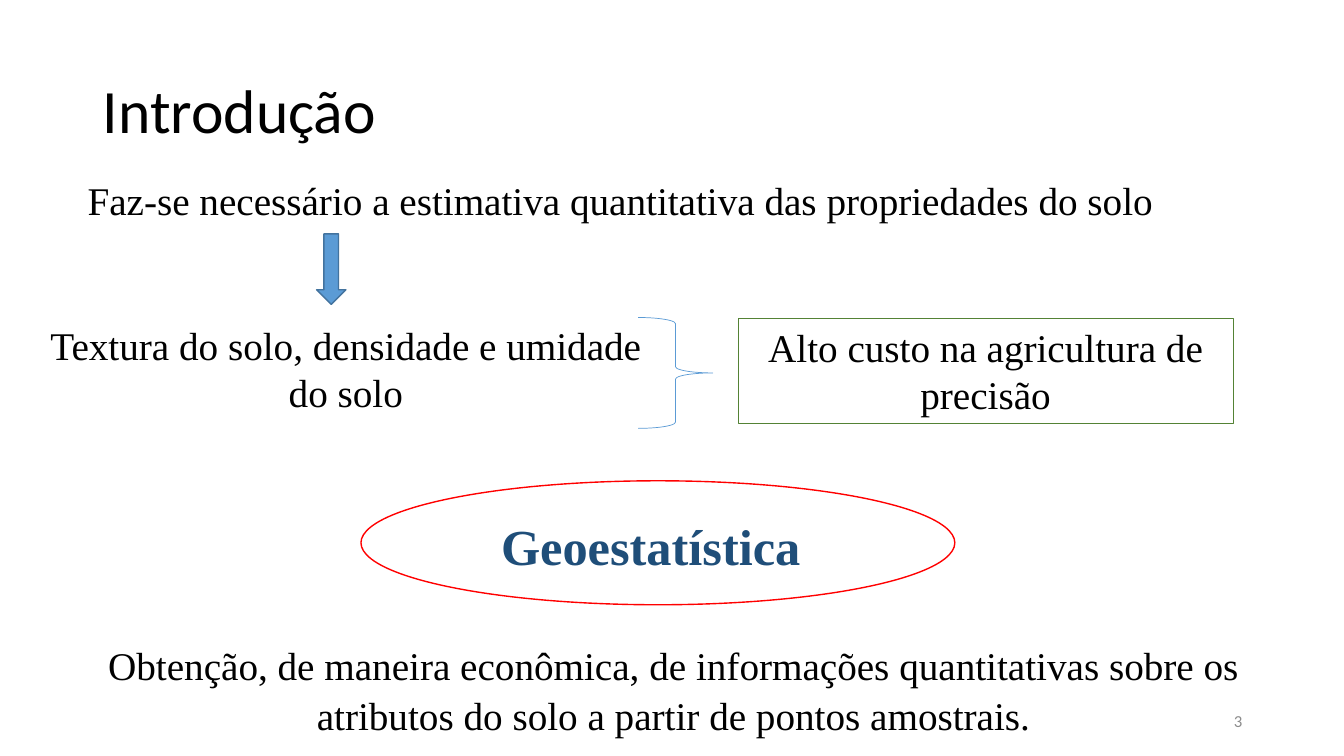
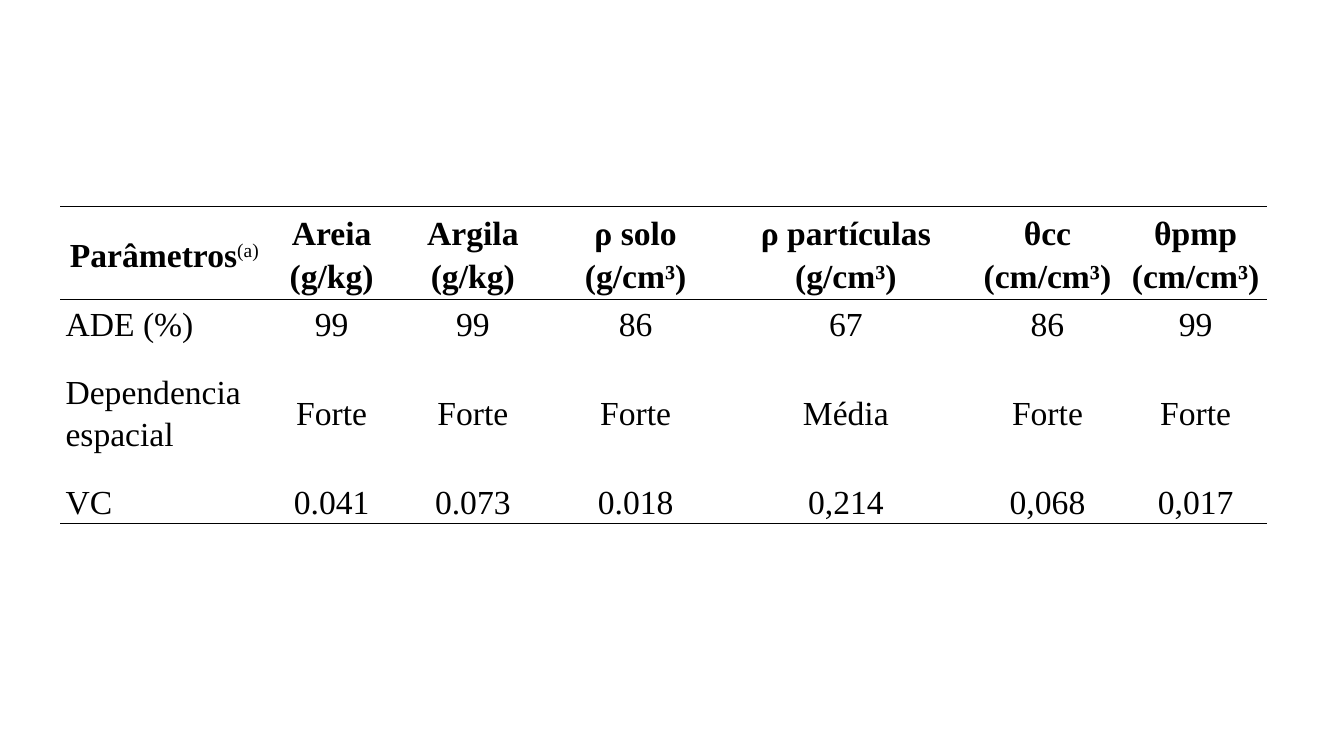
import lxml.etree
import pptx
import pptx.dml.color
import pptx.enum.shapes
import pptx.enum.text
import pptx.oxml.ns
import pptx.util

Inches = pptx.util.Inches
Pt = pptx.util.Pt
Align = pptx.enum.text.PP_ALIGN
Anchor = pptx.enum.text.MSO_ANCHOR
Shape = pptx.enum.shapes.MSO_SHAPE
qn = pptx.oxml.ns.qn

TITLE_ONLY, BLANK = 5, 6


def color(hex_string):
    return pptx.dml.color.RGBColor.from_string(hex_string)


class Deck:
    """Holds the shared style and the slide being filled."""
    body_font, title_font = "Times New Roman", "Calibri"
    black, gray, navy = "000000", "8C8C8C", "1F4E79"
    blue, dark_blue, green, red = "5B9BD5", "43739E", "548235", "FF0000"

    def __init__(self):
        self.presentation = pptx.Presentation()
        self.presentation.slide_width = Inches(13.33)
        self.presentation.slide_height = Inches(7.5)
        self.slide = None

    def new_slide(self, layout):
        layouts = self.presentation.slide_layouts
        self.slide = self.presentation.slides.add_slide(layouts[layout])

    def format_text(self, text_frame, size=28, font=None, hex_string=black, bold=False,
                    align=Align.CENTER, anchor=Anchor.TOP, spacing=1.0, after=0):
        text_frame.word_wrap = True
        text_frame.vertical_anchor = anchor
        for paragraph in text_frame.paragraphs:
            paragraph.alignment = align
            paragraph.line_spacing = spacing
            paragraph.space_after = Pt(after)
            for run in paragraph.runs:
                run.font.size = Pt(size)
                run.font.name = font or self.body_font
                run.font.bold = bold
                run.font.color.rgb = color(hex_string)

    def title(self, text):
        title = self.slide.shapes.title
        title.left, title.top = Inches(0.92), Inches(0.4)
        title.width, title.height = Inches(11.5), Inches(1.45)
        title.text_frame.text = text
        title.text_frame.auto_size = pptx.enum.text.MSO_AUTO_SIZE.NONE
        self.format_text(title.text_frame, 44, self.title_font, align=Align.LEFT,
                         anchor=Anchor.MIDDLE, spacing=0.9)

    def text(self, box, text, **style):
        text_box = self.slide.shapes.add_textbox(*map(Inches, box))
        text_box.text_frame.text = text
        self.format_text(text_box.text_frame, **style)

    def page_number(self, number):
        self.text((9.42, 6.95, 3, 0.4), str(number), size=12, font=self.title_font,
                  hex_string=self.gray, align=Align.RIGHT, anchor=Anchor.MIDDLE)

    def shape(self, kind, box, line, width, fill=None, text=""):
        shape = self.slide.shapes.add_shape(kind, *map(Inches, box))
        shape.shadow.inherit = False
        shape.line.color.rgb = color(line)
        shape.line.width = Pt(width)
        if fill:
            shape.fill.solid()
            shape.fill.fore_color.rgb = color(fill)
        else:
            shape.fill.background()
        if text:
            shape.text_frame.text = text
            self.format_text(shape.text_frame)

    def cell_borders(self, cell, ruled_sides):
        properties = cell._tc.get_or_add_tcPr()
        for side in "LRTB":
            line = lxml.etree.SubElement(properties, qn(f"a:ln{side}"), w=str(Pt(1)))
            if side in ruled_sides:
                fill = lxml.etree.SubElement(line, qn("a:solidFill"))
                lxml.etree.SubElement(fill, qn("a:srgbClr"), val=self.black)
            else:
                lxml.etree.SubElement(line, qn("a:noFill"))

    def table(self, left, top, column_widths, row_heights, rows):
        """Draws a table ruled above and below its header and at its foot."""
        frame = self.slide.shapes.add_table(
            len(rows), len(column_widths), Inches(left), Inches(top),
            Inches(sum(column_widths)), Inches(sum(row_heights)))
        table = frame.table
        table.first_row = table.horz_banding = False
        for column, width in zip(table.columns, column_widths):
            column.width = Inches(width)
        for row, height in zip(table.rows, row_heights):
            row.height = Inches(height)
        ruled_sides = {0: "TB", 1: "T", len(rows) - 1: "B"}
        for row_index, row in enumerate(rows):
            for column_index, text in enumerate(row):
                cell = table.cell(row_index, column_index)
                cell.margin_left = cell.margin_right = Inches(0.05)
                cell.margin_top = cell.margin_bottom = 0
                cell.text_frame.text = text
                is_label = row_index > 0 and column_index == 0
                self.format_text(cell.text_frame, 24, bold=row_index == 0, spacing=1.15,
                                 align=Align.LEFT if is_label else Align.CENTER)
                cell.vertical_anchor = Anchor.MIDDLE
                self.cell_borders(cell, ruled_sides.get(row_index, ""))
                cell.fill.background()
        return table

    def superscript(self, cell, text):
        paragraph = cell.text_frame.paragraphs[0]
        run = paragraph.add_run()
        run.text = text
        run.font.size = Pt(24)
        run.font.name = self.body_font
        run.font.bold = False
        run.font.color.rgb = color(self.black)
        run._r.get_or_add_rPr().set("baseline", "30000")


def introduction_slide(deck):
    deck.new_slide(TITLE_ONLY)
    deck.title("Introdução")

    # Need, soil properties and their cost
    deck.text((0.77, 1.7, 11.64, 0.57),
              "Faz-se necessário a estimativa quantitativa das propriedades do solo",
              align=Align.LEFT)
    deck.shape(Shape.DOWN_ARROW, (3.14, 2.32, 0.29, 0.7), deck.dark_blue, 1, fill=deck.blue)
    deck.text((0.4, 3.14, 6.06, 1.04), "Textura do solo, densidade e umidade do solo")
    deck.shape(Shape.RIGHT_BRACE, (6.33, 3.15, 0.74, 1.1), deck.blue, 0.5)
    deck.shape(Shape.RECTANGLE, (7.32, 3.16, 4.91, 1.04), deck.green, 0.75,
               text="Alto custo na agricultura de precisão")

    # Geostatistics and what it offers
    deck.text((3.15, 5.02, 6.61, 0.71), "Geoestatística", size=36, bold=True,
              hex_string=deck.navy, spacing=1.07, after=8)
    deck.shape(Shape.OVAL, (3.58, 4.77, 5.89, 1.23), deck.red, 1)
    deck.text((0.5, 6.28, 12.36, 1.11),
              "Obtenção, de maneira econômica, de informações quantitativas sobre os "
              "atributos do solo a partir de pontos amostrais.", spacing=1.07, after=8)
    deck.page_number(3)


def parameters_slide(deck):
    deck.new_slide(BLANK)
    rows = [
        ["Parâmetros", "Areia (g/kg)", "Argila (g/kg)", "ρ solo (g/cm³)",
         "ρ partículas (g/cm³)", "θcc (cm/cm³)", "θpmp (cm/cm³)"],
        ["ADE (%)", "99", "99", "86", "67", "86", "99"],
        ["Dependencia espacial", "Forte", "Forte", "Forte", "Média", "Forte", "Forte"],
        ["VC", "0.041", "0.073", "0.018", "0,214", "0,068", "0,017"],
    ]
    table = deck.table(0.6, 2.05, [2.06, 1.26, 1.54, 1.69, 2.48, 1.52, 1.42],
                       [0.85, 0.43, 1.3, 0.43], rows)
    deck.superscript(table.cell(0, 0), "(a)")


def main():
    deck = Deck()
    introduction_slide(deck)
    parameters_slide(deck)
    deck.presentation.save("out.pptx")


if __name__ == "__main__":
    main()
